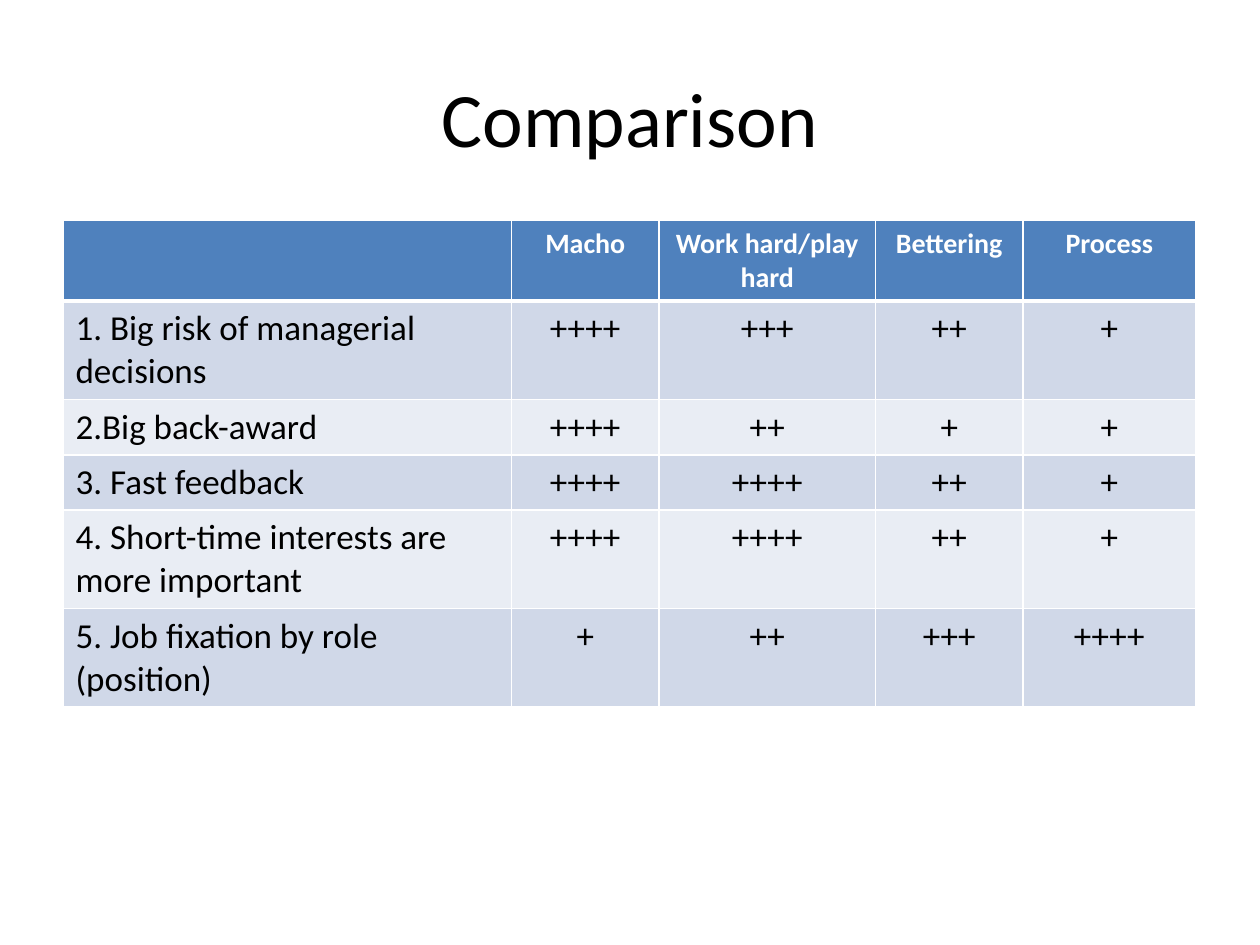
from pptx import Presentation
from pptx.dml.color import RGBColor as RGB
from pptx.enum.text import MSO_ANCHOR as Anchor, PP_ALIGN as Align
from pptx.oxml import parse_xml
from pptx.oxml.ns import nsdecls
from pptx.util import Inches, Pt

WHITE = RGB(0xFF, 0xFF, 0xFF)
BLACK = RGB(0, 0, 0)
HEADER = RGB(0x4F, 0x81, 0xBD)
BANDS = RGB(0xE9, 0xED, 0xF4), RGB(0xD0, 0xD8, 0xE8)

WIDTH, HEIGHT = Inches(10), Inches(7.5)
MARGIN = 0.05
COLS = 3.56, 1.17, 1.72, 1.17, 1.37
ROWS = 0.64, 0.78, 0.44, 0.44, 0.78, 0.78

TITLE_FONT = {"name": "Calibri", "size": Pt(44), "bold": False}
HEADER_FONT = {"name": "Calibri", "size": Pt(16), "bold": True}
BODY_FONT = {"name": "Calibri", "size": Pt(20), "bold": False}

DATA = [
    ("", "Macho", "Work hard/play hard", "Bettering", "Process"),
    ("1. Big risk of managerial decisions", "++++", "+++", "++", "+"),
    ("2.Big back-award", "++++", "++", "+", "+"),
    ("3. Fast feedback", "++++", "++++", "++", "+"),
    ("4. Short-time interests are more important", "++++", "++++", "++", "+"),
    ("5. Job fixation by role (position)", "+", "++", "+++", "++++"),
]


def write(tf, text, font, color, align):
    p = tf.paragraphs[0]
    p.alignment = align
    if not text:
        return
    r = p.add_run()
    r.text = text
    for key, value in font.items():
        setattr(r.font, key, value)
    r.font.color.rgb = color


def set_borders(cell, widths):
    tc_pr = cell._tc.get_or_add_tcPr()
    for i, (side, width) in enumerate(widths.items()):
        tc_pr.insert(i, parse_xml(
            f'<a:ln{side} {nsdecls("a")} w="{Pt(width)}"><a:solidFill>'
            f'<a:srgbClr val="{WHITE}"/></a:solidFill></a:ln{side}>'))


def add_title(slide, text):
    sp = slide.shapes.add_textbox(int(WIDTH * MARGIN), int(HEIGHT * 0.04),
                                  int(WIDTH * (1 - 2 * MARGIN)), Inches(1.25))
    tf = sp.text_frame
    tf.word_wrap = True
    tf.vertical_anchor = Anchor.MIDDLE
    write(tf, text, TITLE_FONT, BLACK, Align.CENTER)


def add_comparison_table(slide):
    table = slide.shapes.add_table(
        len(ROWS), len(COLS), int(WIDTH * MARGIN), Inches(1.75),
        Inches(sum(COLS)), Inches(sum(ROWS))).table
    for col, width in zip(table.columns, COLS):
        col.width = Inches(width)
    for row, height in zip(table.rows, ROWS):
        row.height = Inches(height)
    for i, texts in enumerate(DATA):
        font, color, fill = ((BODY_FONT, BLACK, BANDS[i % 2]) if i
                             else (HEADER_FONT, WHITE, HEADER))
        widths = {"L": 1, "R": 1, "T": 3 if i == 1 else 1, "B": 1 if i else 3}
        for j, text in enumerate(texts):
            cell = table.cell(i, j)
            cell.fill.solid()
            cell.fill.fore_color.rgb = fill
            set_borders(cell, widths)
            write(cell.text_frame, text, font, color,
                  Align.CENTER if j else Align.LEFT)


def main():
    prs = Presentation()
    prs.slide_width, prs.slide_height = WIDTH, HEIGHT
    slide = prs.slides.add_slide(prs.slide_layouts[6])
    add_title(slide, "Comparison")
    add_comparison_table(slide)
    prs.save("out.pptx")


if __name__ == "__main__":
    main()
